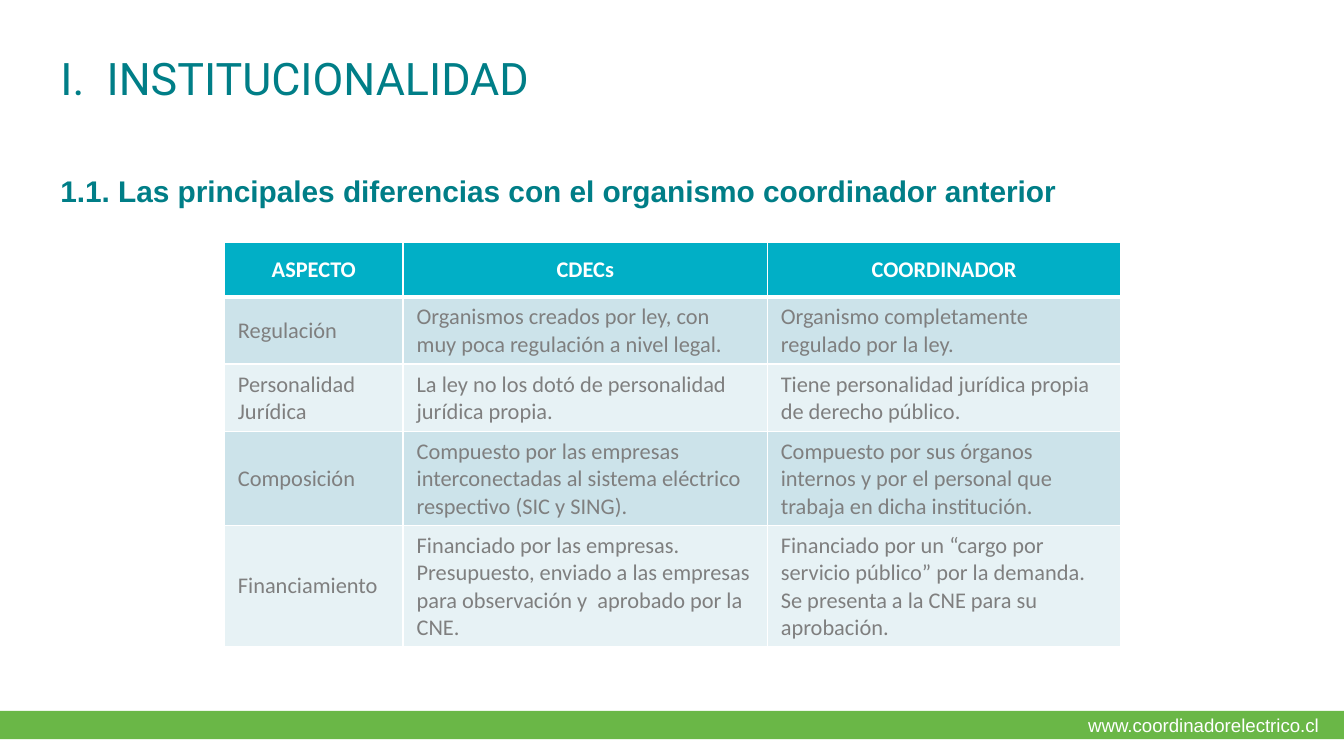
from pptx import Presentation
from pptx.dml.color import RGBColor
from pptx.enum.shapes import MSO_SHAPE
from pptx.enum.text import MSO_ANCHOR as Anchor, MSO_AUTO_SIZE as AutoSize, PP_ALIGN as Align
from pptx.oxml.ns import qn
from pptx.util import Inches, Pt
from lxml.etree import SubElement

WIDTH = Inches(10)
HEIGHT = WIDTH * 9 // 16
TEAL = RGBColor(0x00, 0x7E, 0x87)
CYAN = RGBColor(0x01, 0xAF, 0xC6)
GREEN = RGBColor(0x6A, 0xB7, 0x47)
GRAY = RGBColor(0x7F, 0x7F, 0x7F)
WHITE = RGBColor(0xFF, 0xFF, 0xFF)
BANDS = RGBColor(0xCC, 0xE3, 0xEA), RGBColor(0xE7, 0xF2, 0xF5)

COLUMN_PARTS = 1.33, 2.71, 2.63
ROW_HEIGHT = Inches(0.41)
ROWS = [
    ("ASPECTO", "CDECs", "COORDINADOR"),
    ("Regulación",
     "Organismos creados por ley, con muy poca regulación a nivel legal.",
     "Organismo completamente regulado por la ley."),
    ("Personalidad Jurídica",
     "La ley no los dotó de personalidad jurídica propia.",
     "Tiene personalidad jurídica propia de derecho público."),
    ("Composición",
     "Compuesto por las empresas interconectadas al sistema eléctrico respectivo (SIC y SING).",
     "Compuesto por sus órganos internos y por el personal que trabaja en dicha institución."),
    ("Financiamiento",
     "Financiado por las empresas. Presupuesto, enviado a las empresas para observación y  "
     "aprobado por la CNE.",
     "Financiado por un “cargo por servicio público” por la demanda. Se presenta a la CNE "
     "para su aprobación."),
]


def box(left, top, width, height):
    """Return a box in slide units from lengths in inches."""
    return tuple(Inches(length) for length in (left, top, width, height))


def write(frame, text, font, size, color, bold=False, align=Align.LEFT, anchor=Anchor.TOP):
    """Fill a text frame with one formatted paragraph."""
    frame.text = text
    frame.word_wrap = True
    frame.vertical_anchor = anchor
    paragraph = frame.paragraphs[0]
    paragraph.alignment = align
    paragraph.font.name = font
    paragraph.font.size = Pt(size)
    paragraph.font.bold = bold
    paragraph.font.color.rgb = color


def add_headings(slide, area):
    """Place the title and the subheading below it."""
    left, top, width, height = area
    title = slide.shapes.title
    title.left, title.top, title.width, title.height = left, top, width, int(height * 0.4)
    write(title.text_frame, "I.  INSTITUCIONALIDAD", "Roboto", 24, TEAL)
    title.text_frame.auto_size = AutoSize.NONE
    subheading = slide.shapes.add_textbox(
        left, top + int(height * 0.555), width, int(height * 0.44))
    write(subheading.text_frame,
          "1.1. Las principales diferencias con el organismo coordinador anterior",
          "Arial", 16, TEAL, bold=True)


def add_borders(cell, top, bottom):
    """Draw white borders, with top and bottom widths in points."""
    properties = cell._tc.get_or_add_tcPr()
    for side, points in (("L", 1), ("R", 1), ("T", top), ("B", bottom)):
        line = SubElement(properties, qn(f"a:ln{side}"), w=str(Pt(points)))
        SubElement(SubElement(line, qn("a:solidFill")), qn("a:srgbClr"), val=str(WHITE))


def add_comparison(slide, area):
    """Place the table that compares both bodies."""
    left, top, width, height = area
    comparison = slide.shapes.add_table(len(ROWS), len(COLUMN_PARTS), *area)
    table = comparison.table
    table.horz_banding = False
    for column, part in zip(table.columns, COLUMN_PARTS):
        column.width = int(width * part / sum(COLUMN_PARTS))
    for r, texts in enumerate(ROWS):
        header = r == 0
        table.rows[r].height = ROW_HEIGHT
        for c, text in enumerate(texts):
            cell = table.cell(r, c)
            add_borders(cell, top=3 if r == 1 else 1, bottom=3 if header else 1)
            cell.fill.solid()
            cell.fill.fore_color.rgb = CYAN if header else BANDS[(r - 1) % 2]
            write(cell.text_frame, text, "Calibri", 12, WHITE if header else GRAY,
                  bold=header, align=Align.CENTER if header else Align.LEFT)
            cell.vertical_anchor = Anchor.MIDDLE
    comparison.height = height


def add_footer(slide, area):
    """Place the green band and the web address at its right end."""
    left, top, width, height = area
    band = slide.shapes.add_shape(MSO_SHAPE.RECTANGLE, *area)
    band.shadow.inherit = False
    band.fill.solid()
    band.fill.fore_color.rgb = GREEN
    band.line.fill.background()
    address = slide.shapes.add_textbox(
        left + int(width * 0.788), top - Inches(0.03), int(width * 0.203), Inches(0.27))
    write(address.text_frame, "www.coordinadorelectrico.cl", "Arial", 10, WHITE,
          align=Align.RIGHT, anchor=Anchor.MIDDLE)
    address.text_frame.auto_size = AutoSize.SHAPE_TO_FIT_TEXT


def main():
    """Build and save the slide."""
    deck = Presentation()
    deck.slide_width, deck.slide_height = WIDTH, HEIGHT
    slide = deck.slides.add_slide(deck.slide_layouts[5])
    add_footer(slide, box(0, 5.29, 10, 0.21))
    add_headings(slide, box(0.35, 0.33, 9.29, 1.63))
    add_comparison(slide, box(1.67, 1.8, 6.67, 3.01))
    deck.save("out.pptx")


if __name__ == "__main__":
    main()
